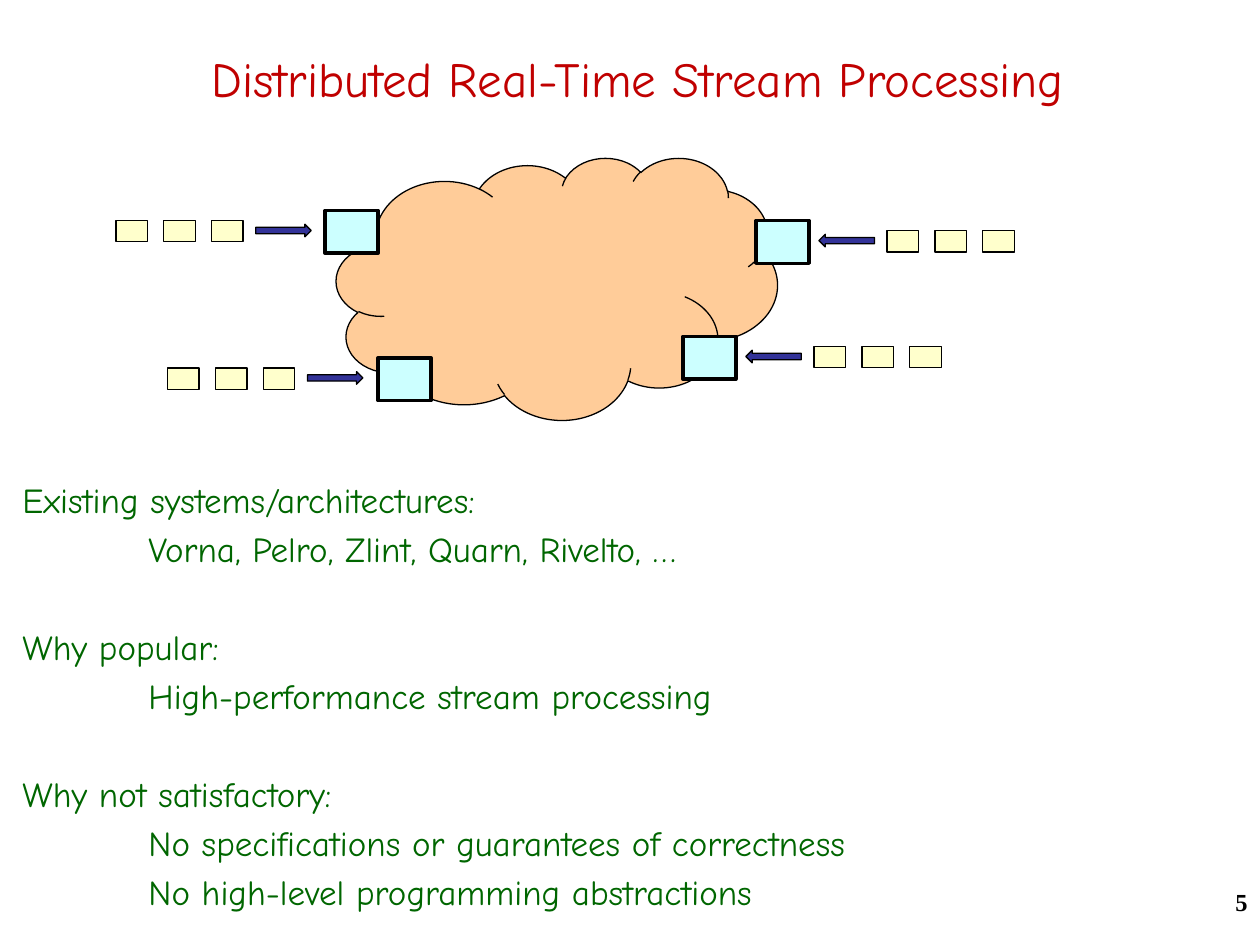
from pptx import Presentation
from pptx.dml.color import RGBColor
from pptx.enum.shapes import MSO_SHAPE as Shape
from pptx.enum.text import MSO_ANCHOR as Anchor, PP_ALIGN as Align
from pptx.util import Inches, Pt

COLORS = {
    "title": "C00000",
    "body": "006600",
    "black": "000000",
    "item": "FFFFCC",
    "arrow": "333399",
    "cloud": "FFCC99",
    "node": "CCFFFF",
}
FONT = "Comic Neue"


def rgb(name):
    return RGBColor.from_string(COLORS[name])


def write(p, text, size=20, color="body", font=FONT, bold=False,
          align=Align.LEFT, before=0, indent=0):
    """Fill one paragraph with formatted text."""
    p.alignment = align
    p.space_before = Pt(before)
    if indent:
        pPr = p._p.get_or_add_pPr()
        pPr.set("marL", str(Inches(indent)))
        pPr.set("indent", "0")
    r = p.add_run()
    r.text = text
    r.font.size, r.font.name, r.font.bold = Pt(size), font, bold
    r.font.color.rgb = rgb(color)


class Diagram:
    ITEM_W, ITEM_H = 0.25, 0.17
    ITEM_OFFSETS = (0, 0.38, 0.76)
    ARROW_W, ARROW_H = 0.44, 0.1
    ARROW_OFFSET = 1.11

    def __init__(self, slide):
        self.slide = slide

    def text_box(self, x, y, w, h, anchor=Anchor.TOP):
        box = self.slide.shapes.add_textbox(
            Inches(x), Inches(y), Inches(w), Inches(h))
        tf = box.text_frame
        tf.word_wrap = True
        tf.vertical_anchor = anchor
        return tf

    def shape(self, kind, x, y, w, h, fill, line=0.75, parent=None):
        shapes = (parent or self.slide).shapes
        sp = shapes.add_shape(kind, Inches(x), Inches(y), Inches(w), Inches(h))
        sp.shadow.inherit = False
        sp.fill.solid()
        sp.fill.fore_color.rgb = rgb(fill)
        sp.line.color.rgb = rgb("black")
        sp.line.width = Pt(line)

    def node(self, x, y):
        self.shape(Shape.RECTANGLE, x, y, 0.42, 0.34, "node", line=2)

    def stream(self, outer, y, mirrored=False):
        """Three items and an arrow, running inwards from the outer edge."""
        group = self.slide.shapes.add_group_shape()

        def left(offset, width):
            return outer - offset - width if mirrored else outer + offset

        for offset in self.ITEM_OFFSETS:
            self.shape(Shape.RECTANGLE, left(offset, self.ITEM_W), y,
                       self.ITEM_W, self.ITEM_H, "item", parent=group)
        arrow = Shape.LEFT_ARROW if mirrored else Shape.RIGHT_ARROW
        self.shape(arrow, left(self.ARROW_OFFSET, self.ARROW_W), y + 0.03,
                   self.ARROW_W, self.ARROW_H, "arrow", parent=group)


def main():
    prs = Presentation()
    prs.slide_width, prs.slide_height = Inches(10), Inches(7.5)
    s = Diagram(prs.slides.add_slide(prs.slide_layouts[6]))

    # Title and slide number
    tf = s.text_box(0.25, 0.33, 9.75, 0.58, anchor=Anchor.MIDDLE)
    write(tf.paragraphs[0], "Distributed Real-Time Stream Processing ",
          size=28, color="title", align=Align.CENTER)
    tf = s.text_box(7.92, 6.99, 2.08, 0.5)
    write(tf.paragraphs[0], "5", size=14, color="black",
          font="Times New Roman", bold=True, align=Align.RIGHT)

    # Headed points
    sections = {
        "Existing systems/architectures:": [
            "Vorna, Pelro, Zlint, Quarn, Rivelto, …"],
        "Why popular:": ["High-performance stream processing"],
        "Why not satisfactory:": [
            "No specifications or guarantees of correctness",
            "No high-level programming abstractions"],
    }
    tf = s.text_box(0.08, 3.75, 9.82, 3.72)
    for i, (heading, points) in enumerate(sections.items()):
        p = tf.add_paragraph() if i else tf.paragraphs[0]
        write(p, heading, before=32 if i else 4)
        for point in points:
            write(tf.add_paragraph(), point, before=4, indent=1)

    # Cloud with a stream feeding each of its nodes
    s.shape(Shape.CLOUD, 2.67, 1.25, 3.5, 2.08, "cloud")
    for outer, y, node_x, mirrored in (
            (0.92, 1.75, 2.58, False), (1.33, 2.92, 3, False),
            (8.05, 1.83, 6, True), (7.47, 2.75, 5.42, True)):
        s.stream(outer, y, mirrored)
        s.node(node_x, y - 0.08)

    prs.save("out.pptx")


if __name__ == "__main__":
    main()
